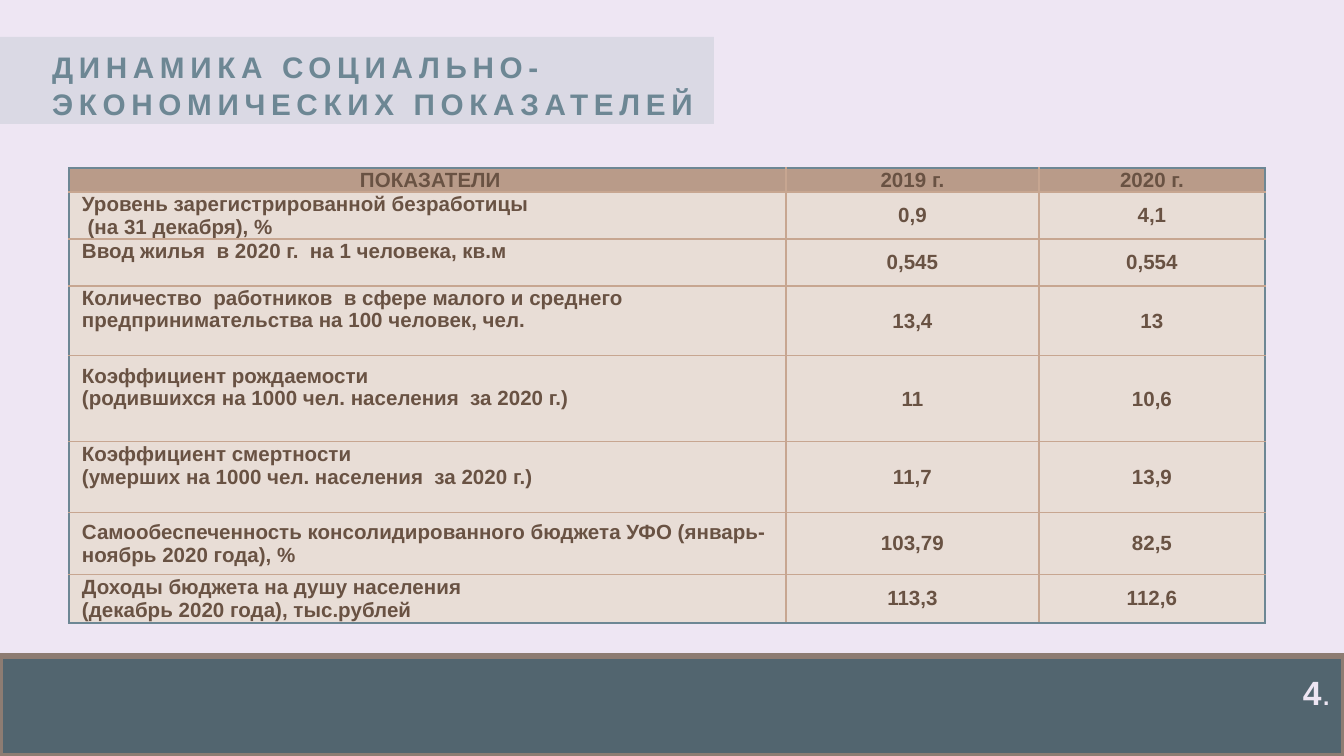
from dataclasses import dataclass

from lxml import etree
from pptx import Presentation
from pptx.dml.color import RGBColor
from pptx.enum.shapes import MSO_SHAPE
from pptx.enum.text import MSO_ANCHOR, MSO_AUTO_SIZE, PP_ALIGN
from pptx.oxml.ns import qn
from pptx.util import Emu, Pt

RECT = MSO_SHAPE.RECTANGLE
TOP, MID = MSO_ANCHOR.TOP, MSO_ANCHOR.MIDDLE
LEFT, MIDDLE, RIGHT = PP_ALIGN.LEFT, PP_ALIGN.CENTER, PP_ALIGN.RIGHT
FIXED = MSO_AUTO_SIZE.NONE
EMU_PER_PX = 914400 / 134.4


@dataclass(frozen=True)
class Theme:
    font: str = "Arial"
    back: str = "EEE6F3"
    band: str = "A7B7BF"
    title: str = "6D8794"
    head: str = "B99B89"
    body: str = "E8DDD6"
    text: str = "695243"
    grid: str = "C7A691"
    foot: str = "52656F"
    edge: str = "8D7C72"
    title_size: float = 15.9
    cell_size: float = 11
    page_size: float = 18


@dataclass(frozen=True)
class Row:
    height: int
    lines: tuple[str, ...]
    old: str
    new: str
    gap: int = 0


THEME = Theme()
LINE = 23
COLS = (717, 253, 226)
ROWS = (
    Row(24, (" ПОКАЗАТЕЛИ",), "2019 г.", "2020 г."),
    Row(47, ("Уровень зарегистрированной безработицы",
             " (на 31 декабря), %"), "0,9", "4,1"),
    Row(47, ("Ввод жилья  в 2020 г.  на 1 человека, кв.м",),
        "0,545", "0,554", LINE),
    Row(70, ("Количество  работников  в сфере малого и среднего "
             "предпринимательства на 100 человек, чел.",),
        "13,4", "13", LINE),
    Row(86, ("Коэффициент рождаемости",
             "(родившихся на 1000 чел. населения  за 2020 г.)"),
        "11", "10,6", LINE),
    Row(71, ("Коэффициент смертности",
             "(умерших на 1000 чел. населения  за 2020 г.)"),
        "11,7", "13,9", LINE),
    Row(62, ("Самообеспеченность консолидированного бюджета УФО "
             "(январь-ноябрь 2020 года), %",), "103,79", "82,5"),
    Row(48, ("Доходы бюджета на душу населения",
             "(декабрь 2020 года), тыс.рублей"), "113,3", "112,6"),
)


def px(num: int) -> Emu:
    return Emu(round(num * EMU_PER_PX))


def rgb(code: str) -> RGBColor:
    return RGBColor.from_string(code)


def paint(item, code: str) -> None:
    item.fill.solid()
    item.fill.fore_color.rgb = rgb(code)


def inset(item, left: int, top: int, right: int, bottom: int) -> None:
    item.margin_left, item.margin_top = px(left), px(top)
    item.margin_right, item.margin_bottom = px(right), px(bottom)


def add_run(para, text: str, size: float, code: str, bold: bool = True):
    run = para.add_run()
    run.text = text
    font = run.font
    font.name, font.size, font.bold = THEME.font, Pt(size), bold
    font.color.rgb = rgb(code)
    return run


def add_title(slide) -> None:
    box = slide.shapes.title
    box.left, box.top, box.width, box.height = map(px, (0, 37, 714, 87))
    paint(box, THEME.band)
    for color in box.element.iter(qn("a:srgbClr")):
        etree.SubElement(color, qn("a:alpha"), val="27000")
    frame = box.text_frame
    frame.auto_size, frame.word_wrap = FIXED, True
    frame.vertical_anchor = MID
    inset(frame, 52, 7, 5, 0)
    para = frame.paragraphs[0]
    para.alignment, para.line_spacing = LEFT, 1.05
    run = add_run(para, "ДИНАМИКА СОЦИАЛЬНО-ЭКОНОМИЧЕСКИХ ПОКАЗАТЕЛЕЙ",
                  THEME.title_size, THEME.title)
    run.font.element.set("spc", "300") if hasattr(run.font, "element") \
        else run._r.get_or_add_rPr().set("spc", "300")


def add_edges(cell, row: int, col: int) -> None:
    """Rule each side, with a stronger line around the whole table."""
    sides = {"lnL": col == 0, "lnR": col == len(COLS) - 1,
             "lnT": row == 0, "lnB": row == len(ROWS) - 1}
    props = cell._tc.get_or_add_tcPr()
    for tag, outer in sides.items():
        line = etree.SubElement(props, qn(f"a:{tag}"),
                                w=str(Pt(1 if outer else 0.75)))
        fill = etree.SubElement(line, qn("a:solidFill"))
        etree.SubElement(fill, qn("a:srgbClr"),
                         val=THEME.title if outer else THEME.grid)


def fill_cell(cell, lines: tuple[str, ...], align: PP_ALIGN) -> None:
    frame = cell.text_frame
    for num, text in enumerate(lines):
        para = frame.add_paragraph() if num else frame.paragraphs[0]
        para.alignment = align
        add_run(para, text, THEME.cell_size, THEME.text)


def add_grid(slide) -> None:
    high = sum(row.height for row in ROWS)
    table = slide.shapes.add_table(
        len(ROWS), len(COLS), px(69), px(168), px(sum(COLS)), px(high)).table
    table.first_row = table.horz_banding = False
    for col, width in zip(table.columns, COLS):
        col.width = px(width)
    for r, row in enumerate(ROWS):
        table.rows[r].height = px(row.height)
        for c, lines in enumerate((row.lines, (row.old,), (row.new,))):
            cell = table.cell(r, c)
            label = r > 0 and c == 0
            cell.vertical_anchor = MID
            inset(cell, 13 if label else 0, 0, 0, row.gap if label else 0)
            add_edges(cell, r, c)
            paint(cell, THEME.body if r else THEME.head)
            fill_cell(cell, lines, LEFT if label else MIDDLE)


def add_foot(slide) -> None:
    bar = slide.shapes.add_shape(RECT, *map(px, (0, 656, 1344, 100)))
    bar.shadow.inherit = False
    paint(bar, THEME.foot)
    bar.line.color.rgb, bar.line.width = rgb(THEME.edge), Pt(3.35)
    frame = bar.text_frame
    frame.word_wrap, frame.vertical_anchor = True, TOP
    inset(frame, 13, 16, 13, 0)
    para = frame.paragraphs[0]
    para.alignment = RIGHT
    add_run(para, "4", THEME.page_size, THEME.back)
    add_run(para, ".", THEME.page_size, THEME.back, False)


def main() -> None:
    deck = Presentation()
    deck.slide_width, deck.slide_height = px(1344), px(756)
    slide = deck.slides.add_slide(deck.slide_layouts[5])
    paint(slide.background, THEME.back)
    add_title(slide)
    add_grid(slide)
    add_foot(slide)
    deck.save("out.pptx")


if __name__ == "__main__":
    main()
